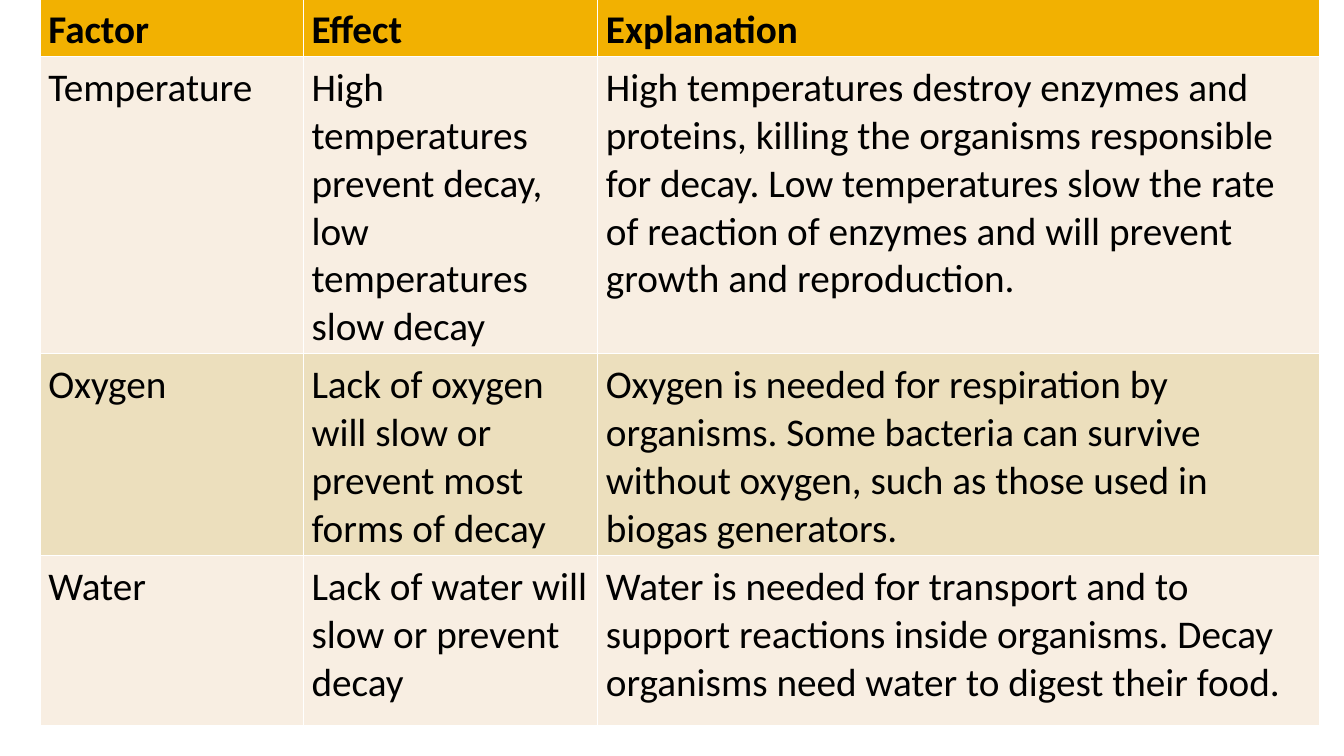
from dataclasses import dataclass

from lxml.etree import SubElement
from pptx import Presentation
from pptx.dml.color import RGBColor
from pptx.oxml.ns import qn
from pptx.util import Inches, Pt


@dataclass(frozen=True)
class Theme:
    font: str = "Calibri"
    text_size: int = 28
    text: str = "000000"
    header: str = "F2B101"
    bands: tuple = ("F8EEE2", "ECDFBD")
    border: str = "FFFFFF"
    border_width: float = 0.75


THEME = Theme()
COLUMN_WIDTHS = (2.61, 2.92, 7.16)
ROW_HEIGHTS = (0.52, 2.46, 1.69, 1.69)
DECAY_FACTORS = (
    ("Factor", "Effect", "Explanation"),
    (
        "Temperature",
        "High temperatures prevent decay, low temperatures slow decay",
        "High temperatures destroy enzymes and proteins, killing the organisms "
        "responsible for decay. Low temperatures slow the rate of reaction of "
        "enzymes and will prevent growth and reproduction.",
    ),
    (
        "Oxygen",
        "Lack of oxygen will slow or prevent most forms of decay",
        "Oxygen is needed for respiration by organisms. Some bacteria can survive "
        "without oxygen, such as those used in biogas generators.",
    ),
    (
        "Water",
        "Lack of water will slow or prevent decay",
        "Water is needed for transport and to support reactions inside organisms. "
        "Decay organisms need water to digest their food.",
    ),
)


def add_borders(cell):
    properties = cell._tc.get_or_add_tcPr()
    for side in ("lnL", "lnR", "lnT", "lnB"):
        border = SubElement(properties, qn(f"a:{side}"), w=str(Pt(THEME.border_width)))
        fill = SubElement(border, qn("a:solidFill"))
        SubElement(fill, qn("a:srgbClr"), val=THEME.border)


def fill_cell(cell, wording, color, bold):
    add_borders(cell)
    cell.fill.solid()
    cell.fill.fore_color.rgb = RGBColor.from_string(color)
    cell.margin_left = cell.margin_top = Inches(0.08)
    cell.margin_right = Inches(0.05)
    cell.margin_bottom = Inches(0.02)
    run = cell.text_frame.paragraphs[0].add_run()
    run.text = wording
    run.font.name = THEME.font
    run.font.size = Pt(THEME.text_size)
    run.font.bold = bold
    run.font.color.rgb = RGBColor.from_string(THEME.text)


def add_factor_table(slide):
    table = slide.shapes.add_table(
        len(ROW_HEIGHTS), len(COLUMN_WIDTHS), Inches(0.4), Inches(-0.02),
        Inches(sum(COLUMN_WIDTHS)), Inches(sum(ROW_HEIGHTS)),
    ).table
    for column, width in zip(table.columns, COLUMN_WIDTHS):
        column.width = Inches(width)
    for index, (row, height, factor) in enumerate(
        zip(table.rows, ROW_HEIGHTS, DECAY_FACTORS)
    ):
        row.height = Inches(height)
        is_header = index == 0
        color = THEME.header if is_header else THEME.bands[(index - 1) % 2]
        for cell, wording in zip(row.cells, factor):
            fill_cell(cell, wording, color, is_header)


def main():
    presentation = Presentation()
    presentation.slide_width = Inches(13.33)
    presentation.slide_height = Inches(7.5)
    slide = presentation.slides.add_slide(presentation.slide_layouts[6])
    add_factor_table(slide)
    presentation.save("out.pptx")


if __name__ == "__main__":
    main()
